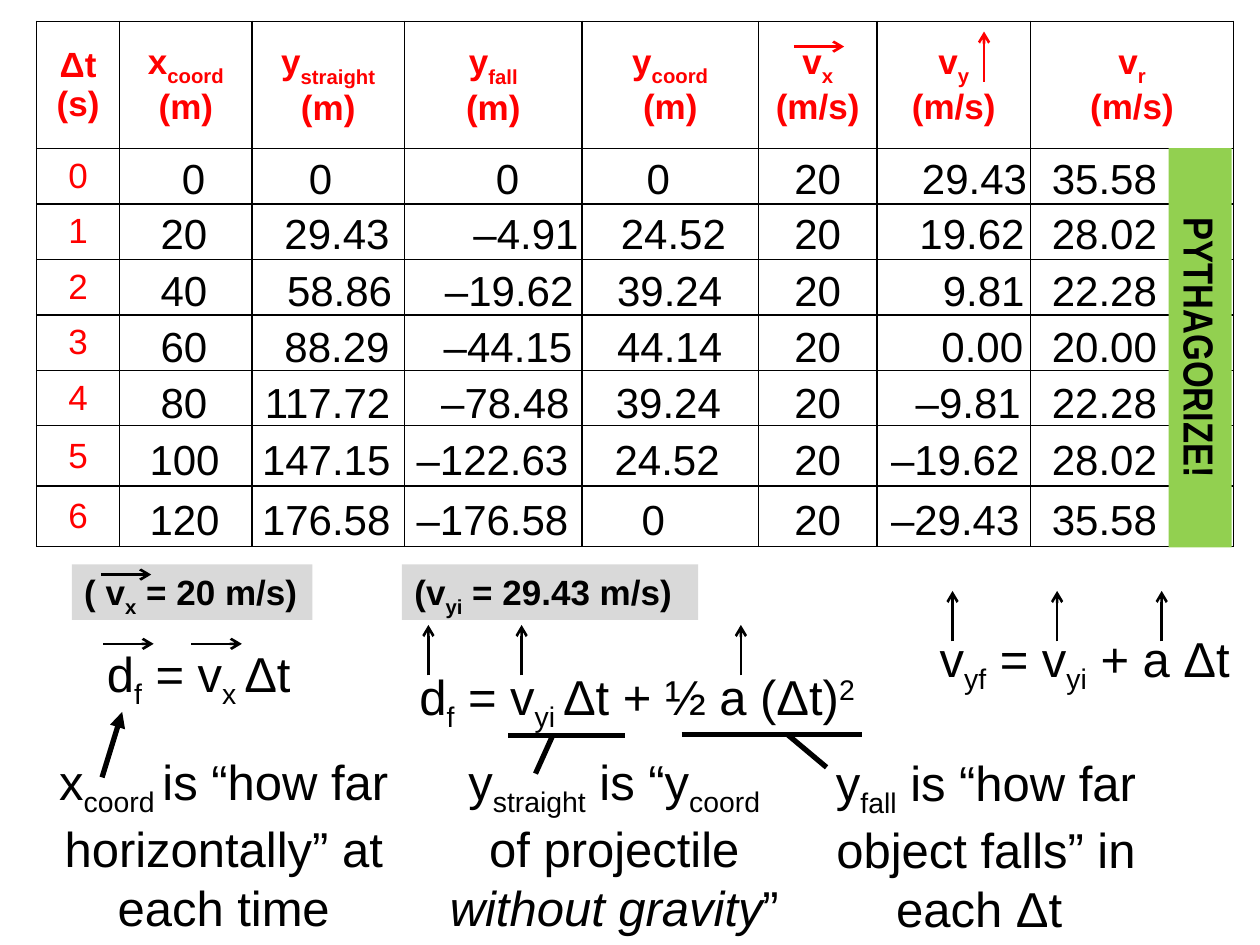
from lxml import etree
from pptx import Presentation
from pptx.dml.color import RGBColor
from pptx.enum.shapes import MSO_CONNECTOR, MSO_SHAPE
from pptx.enum.text import MSO_ANCHOR, MSO_AUTO_SIZE, PP_ALIGN
from pptx.oxml.ns import qn
from pptx.util import Inches, Pt

STRAIGHT = MSO_CONNECTOR.STRAIGHT
RECTANGLE = MSO_SHAPE.RECTANGLE
TOP, MIDDLE = MSO_ANCHOR.TOP, MSO_ANCHOR.MIDDLE
FIT_SHAPE = MSO_AUTO_SIZE.SHAPE_TO_FIT_TEXT
LEFT, CENTER, RIGHT = PP_ALIGN.LEFT, PP_ALIGN.CENTER, PP_ALIGN.RIGHT

BLACK, RED, GREEN, GRAY = "000000", "FF0000", "92D050", "D9D9D9"
SUB, LOW, SUPER, ITALIC = "-25000", "-30000", "30000", "italic"

COLUMN_WIDTHS = [0.66, 1.05, 1.21, 1.41, 1.4, 0.94, 1.22, 1.61]
ROW_HEIGHTS = [1.01] + [0.44] * 5 + [0.48] * 2
HEADERS = [
    [["Δt (s)"]],
    [["x", ("coord", SUB), " (m)"]],
    [["y", ("straight", LOW), " (m)"]],
    [["y", ("fall", LOW)], ["(m)"]],
    [["y", ("coord", SUB)], ["(m)"]],
    [["v", ("x", SUB), " (m/s)"]],
    [["v", ("y", SUB)], ["(m/s)"]],
    [["v", ("r", SUB)], ["(m/s)"]],
]

VALUE_TOPS = [1.16, 1.6, 2.05, 2.49, 2.94, 3.39, 3.87]
VALUE_COLUMNS = [
    (["0", "20", "40", "60", "80", "100", "120"],
     [1.34, 1.17, 1.17, 1.17, 1.17, 1.08, 1.08], CENTER),
    (["0", "29.43", "58.86", "88.29", "117.72", "147.15", "176.58"],
     [2.35, 2.15, 2.17, 2.15, 1.98, 1.97, 1.97], CENTER),
    (["0", "–4.91", "–19.62", "–44.15", "–78.48", "–122.63", "–176.58"],
     [3.83, 3.64, 3.41, 3.4, 3.38, 3.18, 3.18], RIGHT),
    (["0", "24.52", "39.24", "44.14", "39.24", "24.52", "0"],
     [5.03, 4.82, 4.79, 4.79, 4.78, 4.77, 4.99], CENTER),
    (["20"] * 7, [6.2] * 7, CENTER),
    (["29.43", "19.62", "9.81", "0.00", "–9.81", "–19.62", "–29.43"],
     [7.2, 7.18, 7.37, 7.36, 7.15, 6.95, 6.95], RIGHT),
    (["35.58", "28.02", "22.28", "20.00", "22.28", "28.02", "35.58"],
     [8.24] * 7, CENTER),
]

EXPLANATIONS = [
    ([0.23, 5.94, 3.09, 1.51],
     [["x", ("coord ", SUB), "is “how far"], ["horizontally” at"], ["each time"]]),
    ([3.45, 5.94, 2.85, 1.51],
     [["y", ("straight", SUB), " is “y", ("coord", SUB)], ["of projectile"],
      [("without gravity", ITALIC), "”"]]),
    ([6.5, 5.95, 2.65, 1.51],
     [["y", ("fall", SUB), " is “how far"], ["object falls” in"], ["each Δt "]]),
]
FORMULAS = [
    ([0.75, 5.06, 1.9, 0.57], ["d", ("f", SUB), " = v", ("x ", SUB), "Δt"]),
    ([7.36, 4.94, 2.62, 0.57], ["v", ("yf", SUB), " = v", ("yi", SUB), " + a Δt"]),
    ([3.23, 5.24, 3.82, 0.57],
     ["d", ("f", SUB), " = v", ("yi ", SUB), "Δt + ½ a (Δt)", ("2", SUPER)]),
]
GIVENS = [
    ([0.57, 4.48, 1.91, 0.44], ["( v", ("x", SUB), " = 20 m/s)"]),
    ([3.19, 4.48, 2.35, 0.44], ["(v", ("yi", SUB), " = 29.43 m/s)"]),
]

VECTOR_LENGTH = 0.4
RIGHT_VECTORS = [(1.52, 5.11, BLACK), (0.82, 5.11, BLACK), (0.8, 4.56, BLACK), (6.3, 0.37, RED)]
UP_VECTORS = [(7.56, 5.09, BLACK), (8.39, 5.09, BLACK), (9.22, 5.09, BLACK),
              (5.88, 5.36, BLACK), (4.14, 5.36, BLACK), (3.4, 5.36, BLACK), (7.81, 0.65, RED)]
CALLOUT_LINES = [(4.25, 6.14, 4.39, 5.83), (4.96, 5.84, 4.03, 5.84),
                 (6.56, 6.09, 6.25, 5.83), (5.41, 5.83, 6.84, 5.83)]


def color(value):
    return RGBColor.from_string(value)


def write_text(frame, paragraphs, size=24, font="Arial", fill=BLACK, bold=False,
               align=CENTER, anchor=MIDDLE):
    frame.vertical_anchor = anchor
    for index, runs in enumerate(paragraphs):
        paragraph = frame.paragraphs[0] if index == 0 else frame.add_paragraph()
        paragraph.alignment = align
        for item in runs:
            text, style = (item, None) if isinstance(item, str) else item
            run = paragraph.add_run()
            run.text = text
            run.font.size = Pt(size)
            run.font.name = font
            run.font.bold = bold
            run.font.color.rgb = color(fill)
            if style == ITALIC:
                run.font.italic = True
            elif style:
                run.font._element.set("baseline", style)


def add_text(slide, box, paragraphs, **text_format):
    shape = slide.shapes.add_textbox(*map(Inches, box))
    shape.text_frame.word_wrap = False
    shape.text_frame.auto_size = FIT_SHAPE
    write_text(shape.text_frame, paragraphs, **text_format)


def add_panel(slide, box, paragraphs, fill, rotation=0, wrap=False, **text_format):
    shape = slide.shapes.add_shape(RECTANGLE, *map(Inches, box))
    shape.shadow.inherit = False
    shape.rotation = rotation
    shape.fill.solid()
    shape.fill.fore_color.rgb = color(fill)
    shape.line.fill.background()
    shape.text_frame.word_wrap = wrap
    shape.text_frame.auto_size = FIT_SHAPE
    write_text(shape.text_frame, paragraphs, anchor=TOP, **text_format)


def add_line(slide, ends, width=3, fill=BLACK, head=None):
    connector = slide.shapes.add_connector(STRAIGHT, *map(Inches, ends))
    connector.line.width = Pt(width)
    connector.line.color.rgb = color(fill)
    if head:
        etree.SubElement(connector.line._get_or_add_ln(), qn("a:tailEnd"), type=head)
    etree.SubElement(connector._element.spPr, qn("a:effectLst"))


def set_borders(cell):
    properties = cell._tc.get_or_add_tcPr()
    for index, side in enumerate(("a:lnL", "a:lnR", "a:lnT", "a:lnB")):
        border = etree.Element(qn(side), w=str(Pt(1)))
        fill = etree.SubElement(border, qn("a:solidFill"))
        etree.SubElement(fill, qn("a:srgbClr"), val=BLACK)
        properties.insert(index, border)


def add_motion_table(slide):
    box = [0.29, 0.17, sum(COLUMN_WIDTHS), sum(ROW_HEIGHTS)]
    table = slide.shapes.add_table(len(ROW_HEIGHTS), len(COLUMN_WIDTHS), *map(Inches, box)).table
    table.horz_banding = False
    table.first_row = False
    for column, width in zip(table.columns, COLUMN_WIDTHS):
        column.width = Inches(width)
    for row, height in zip(table.rows, ROW_HEIGHTS):
        row.height = Inches(height)
    for cell in table.iter_cells():
        cell.fill.background()
        set_borders(cell)
    for index, header in enumerate(HEADERS):
        cell = table.cell(0, index)
        cell.vertical_anchor = MIDDLE
        write_text(cell.text_frame, header, size=20, fill=RED, bold=True)
    for second in range(len(VALUE_TOPS)):
        cell = table.cell(second + 1, 0)
        cell.vertical_anchor = MIDDLE
        write_text(cell.text_frame, [[str(second)]], size=20, fill=RED)


def add_values(slide):
    for values, lefts, align in VALUE_COLUMNS:
        for value, left, top in zip(values, lefts, VALUE_TOPS):
            width = 0.2 + 0.19 * len(value) - 0.1 * value.count(".")
            add_text(slide, [left, top, width, 0.5], [[value]], align=align)


def main():
    presentation = Presentation()
    presentation.slide_width = Inches(10)
    presentation.slide_height = Inches(7.5)
    slide = presentation.slides.add_slide(presentation.slide_layouts[6])
    add_motion_table(slide)
    add_values(slide)
    add_panel(slide, [7.94, 2.51, 3.17, 0.5], [["PYTHAGORIZE!"]], GREEN,
              rotation=90, wrap=True, font="Arial Narrow", bold=True)
    for box, paragraphs in EXPLANATIONS:
        add_text(slide, box, paragraphs, size=28)
    for box, runs in FORMULAS:
        add_text(slide, box, [runs], size=28, align=LEFT, anchor=TOP)
    for box, runs in GIVENS:
        add_panel(slide, box, [runs], GRAY, size=20, bold=True, align=LEFT)
    add_line(slide, (0.81, 6.17, 0.97, 5.65), head="triangle")
    for ends in CALLOUT_LINES:
        add_line(slide, ends)
    for x, y, fill in RIGHT_VECTORS:
        add_line(slide, (x, y, x + VECTOR_LENGTH, y), width=1.5, fill=fill, head="arrow")
    for x, y, fill in UP_VECTORS:
        add_line(slide, (x, y, x, y - VECTOR_LENGTH), width=1.5, fill=fill, head="arrow")
    presentation.save("out.pptx")


if __name__ == "__main__":
    main()
